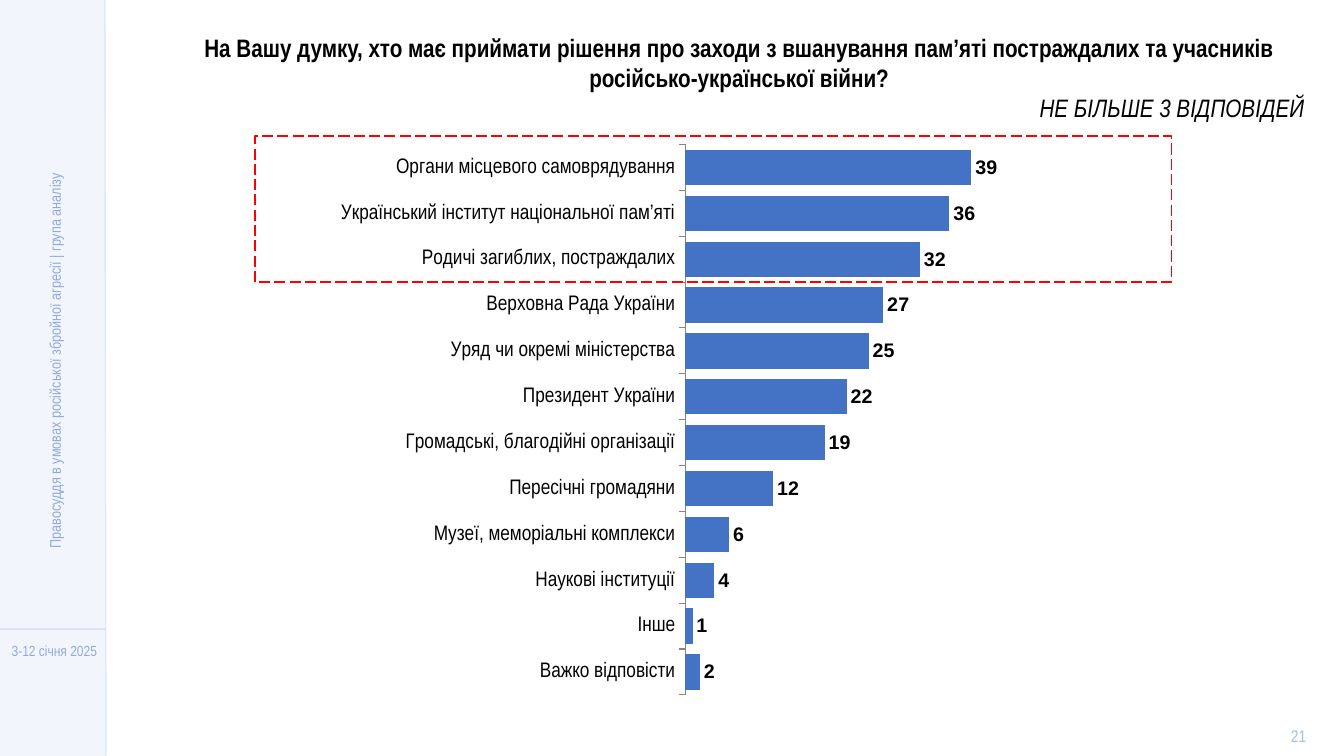
"""Builds a survey slide: ranked bar chart with the top three answers framed."""
from lxml import etree
from pptx import Presentation
from pptx.chart.data import CategoryChartData
from pptx.dml.color import RGBColor
from pptx.enum.chart import XL_CHART_TYPE, XL_LABEL_POSITION, XL_TICK_MARK
from pptx.enum.dml import MSO_LINE
from pptx.enum.shapes import MSO_CONNECTOR, MSO_SHAPE
from pptx.enum.text import MSO_ANCHOR, PP_ALIGN
from pptx.oxml import parse_xml
from pptx.oxml.ns import qn
from pptx.util import Cm, Pt

BAR = XL_CHART_TYPE.BAR_CLUSTERED
OUTSIDE_END = XL_LABEL_POSITION.OUTSIDE_END
TICK_OUTSIDE, TICK_NONE = XL_TICK_MARK.OUTSIDE, XL_TICK_MARK.NONE
LONG_DASH = MSO_LINE.LONG_DASH
STRAIGHT, RECTANGLE = MSO_CONNECTOR.STRAIGHT, MSO_SHAPE.RECTANGLE
TOP, MIDDLE = MSO_ANCHOR.TOP, MSO_ANCHOR.MIDDLE
CENTER, RIGHT = PP_ALIGN.CENTER, PP_ALIGN.RIGHT

QUESTION = (
    "На Вашу думку, хто має приймати рішення про заходи з вшанування "
    "пам’яті постраждалих та учасників російсько-української війни?"
)
ANSWER_LIMIT = "НЕ БІЛЬШЕ 3 ВІДПОВІДЕЙ"
PROJECT = "Правосуддя в умовах російської збройної агресії | група аналізу"
SURVEY_DATES = "3-12 січня 2025"
PAGE_NUMBER = "21"
ANSWERS = [
    ("Органи місцевого самоврядування", 39),
    ("Український інститут національної пам’яті", 36),
    ("Родичі загиблих, постраждалих", 32),
    ("Верховна Рада України", 27),
    ("Уряд чи окремі міністерства", 25),
    ("Президент України", 22),
    ("Громадські, благодійні організації", 19),
    ("Пересічні громадяни", 12),
    ("Музеї, меморіальні комплекси", 6),
    ("Наукові інституції", 4),
    ("Інше", 1),
    ("Важко відповісти", 2),
]

NARROW, SANS = "Arial Narrow", "Arial"
BLACK, PALE_BLUE, SIDE_TEXT = "000000", "DAE3F3", "8FAADC"
SLIDE_WIDTH, SLIDE_HEIGHT = 33.87, 19.05
SIDE_WIDTH = 2.67
PLOT_AREA = {"x": 0.486, "y": 0.15, "w": 0.43, "h": 0.831}


def color(hex_value):
    return RGBColor.from_string(hex_value)


def set_font(font, size, name, hex_value, bold=False, italic=False):
    font.size, font.name = Pt(size), name
    font.bold, font.italic = bold, italic
    font.color.rgb = color(hex_value)


def add_rectangle(slide, left, top, width, height):
    shape = slide.shapes.add_shape(
        RECTANGLE, Cm(left), Cm(top), Cm(width), Cm(height))
    shape.shadow.inherit = False
    return shape


def add_line(slide, start, end, hex_value):
    line = slide.shapes.add_connector(
        STRAIGHT, *(Cm(value) for value in start + end))
    line.line.color.rgb = color(hex_value)
    line.line.width = Pt(1)
    etree.SubElement(line._element.spPr, qn("a:effectLst"))


def add_text(slide, box, lines, anchor=MIDDLE, line_spacing=None, rotation=0):
    shape = slide.shapes.add_textbox(*(Cm(value) for value in box))
    shape.rotation = rotation
    frame = shape.text_frame
    frame.word_wrap = True
    frame.vertical_anchor = anchor
    for index, (text, alignment, font) in enumerate(lines):
        paragraph = frame.add_paragraph() if index else frame.paragraphs[0]
        paragraph.text = text
        paragraph.alignment = alignment
        if line_spacing:
            paragraph.line_spacing = Pt(line_spacing)
        set_font(paragraph.font, *font)


def add_side_panel(slide):
    panel = add_rectangle(slide, 0, 0, SIDE_WIDTH, SLIDE_HEIGHT)
    panel.fill.solid()
    panel.fill.fore_color.rgb = color(PALE_BLUE)
    fill_color = panel._element.spPr.find(qn("a:solidFill"))[0]
    etree.SubElement(fill_color, qn("a:alpha"), val="33000")
    panel.line.fill.background()
    add_line(slide, (SIDE_WIDTH, 15.85), (0, 15.85), PALE_BLUE)
    add_text(slide, (0, 16.05, 2.74, 0.76),
             [(SURVEY_DATES, CENTER, (10.5, NARROW, SIDE_TEXT))],
             line_spacing=11)
    add_line(slide, (2.64, 0), (SIDE_WIDTH, SLIDE_HEIGHT), "DEEBF7")
    add_text(slide, (-5.23, 8.71, 12.98, 0.76),
             [(PROJECT, CENTER, (11, NARROW, SIDE_TEXT))],
             line_spacing=20, rotation=270)


def add_answer_chart(slide):
    data = CategoryChartData(number_format="0")
    data.categories = [answer for answer, _ in ANSWERS]
    data.add_series("Series 1", [share for _, share in ANSWERS])
    chart = slide.shapes.add_chart(
        BAR, Cm(2.64), Cm(1.14), Cm(30.1), Cm(16.69), data).chart
    chart.has_legend = chart.has_title = False
    set_font(chart.font, 18, SANS, BLACK)

    category_axis = chart.category_axis
    category_axis.reverse_order = True
    category_axis.has_major_gridlines = False
    category_axis.major_tick_mark = TICK_OUTSIDE
    category_axis.minor_tick_mark = TICK_NONE
    category_axis.format.line.color.rgb = color("868686")
    set_font(category_axis.tick_labels.font, 15, NARROW, BLACK)

    value_axis = chart.value_axis
    value_axis.visible = False
    value_axis.has_major_gridlines = False
    value_axis.minimum_scale, value_axis.maximum_scale = 0, 70

    plot = chart.plots[0]
    plot.gap_width = 30
    plot.vary_by_categories = False
    series = plot.series[0]
    series.format.fill.solid()
    series.format.fill.fore_color.rgb = color("4472C4")
    labels = series.data_labels
    labels.show_value = True
    labels.number_format, labels.number_format_is_linked = "0", False
    labels.position = OUTSIDE_END
    set_font(labels.font, 14, SANS, BLACK, bold=True)
    place_plot_area(chart)


def place_plot_area(chart):
    modes = "".join(f'<c:{side}Mode val="edge"/>' for side in "xy")
    sizes = "".join(f'<c:{side} val="{share}"/>'
                    for side, share in PLOT_AREA.items())
    layout = parse_xml(
        '<c:layout xmlns:c="http://schemas.openxmlformats.org/drawingml/2006/chart">'
        f'<c:manualLayout><c:layoutTarget val="inner"/>{modes}{sizes}'
        '</c:manualLayout></c:layout>')
    plot_area = chart._chartSpace.chart.plotArea
    for automatic_layout in plot_area.findall(qn("c:layout")):
        plot_area.remove(automatic_layout)
    plot_area.insert(0, layout)


def add_top_answers_frame(slide):
    frame = add_rectangle(slide, 6.43, 3.43, 23.09, 3.68)
    frame.fill.background()
    frame.line.color.rgb = color("FF0000")
    frame.line.width = Pt(1)
    frame.line.dash_style = LONG_DASH


def main():
    presentation = Presentation()
    presentation.slide_width = Cm(SLIDE_WIDTH)
    presentation.slide_height = Cm(SLIDE_HEIGHT)
    slide = presentation.slides.add_slide(presentation.slide_layouts[6])
    add_side_panel(slide)
    add_text(slide, (31.9, 18.26, 1.65, 0.56),
             [(PAGE_NUMBER, CENTER, (12, NARROW, "9DC3E6"))])
    add_answer_chart(slide)
    add_top_answers_frame(slide)
    add_text(slide, (4.14, 0.69, 28.98, 2.57),
             [(QUESTION, CENTER, (18, NARROW, BLACK, True)),
              (ANSWER_LIMIT, RIGHT, (18, NARROW, BLACK, False, True))],
             anchor=TOP)
    presentation.save("out.pptx")


if __name__ == "__main__":
    main()
